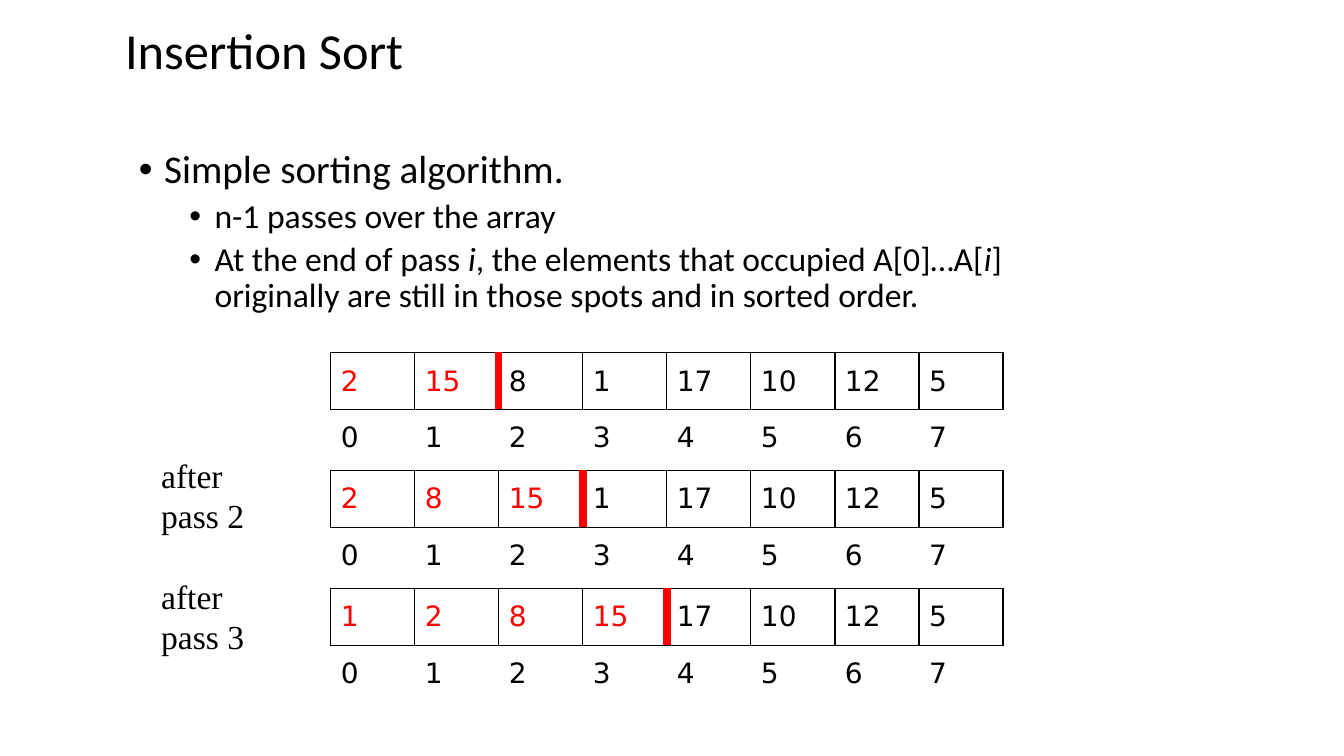
from lxml import etree
from pptx import Presentation
from pptx.dml.color import RGBColor
from pptx.enum.text import MSO_ANCHOR, PP_ALIGN
from pptx.oxml.ns import qn
from pptx.util import Inches, Pt

MIDDLE = MSO_ANCHOR.MIDDLE
TOP = MSO_ANCHOR.TOP
LEFT = PP_ALIGN.LEFT
BLACK, RED = "000000", "FF0000"

PASSES = [
    ([2, 15, 8, 1, 17, 10, 12, 5], 2),
    ([2, 8, 15, 1, 17, 10, 12, 5], 3),
    ([1, 2, 8, 15, 17, 10, 12, 5], 4),
]
POINTS = [
    (0, ["Simple sorting algorithm."]),
    (1, ["n-1 passes over the array"]),
    (1, ["At the end of pass ", "i", ", the elements that occupied A[0]…A[", "i",
         "] originally are still in those spots and in sorted order."]),
]


def color(code):
    return RGBColor.from_string(code)


def style(para, face, size, code=BLACK):
    for run in para.runs:
        run.font.name = face
        run.font.size = Pt(size)
        run.font.color.rgb = color(code)


def place(shape, box):
    shape.left, shape.top, shape.width, shape.height = map(Inches, box)


def add_box(slide, box, wrap):
    frame = slide.shapes.add_textbox(*map(Inches, box)).text_frame
    frame.word_wrap = wrap
    frame.vertical_anchor = TOP
    return frame


def add_title(slide, box, text):
    title = slide.shapes.title
    place(title, box)
    frame = title.text_frame
    frame.text = text
    frame.vertical_anchor = MIDDLE
    para = frame.paragraphs[0]
    para.alignment = LEFT
    para.line_spacing = 0.9
    style(para, "Calibri", 36)


def add_bullet(para, level):
    para.level = level
    props = para._p.get_or_add_pPr()
    props.set("marL", str(Inches(0.25 + 0.5 * level)))
    props.set("indent", str(Inches(-0.25)))
    font = etree.SubElement(props, qn("a:buFont"))
    font.set("typeface", "Arial")
    mark = etree.SubElement(props, qn("a:buChar"))
    mark.set("char", "•")


def add_body(slide, box):
    frame = add_box(slide, box, True)
    for n, (level, parts) in enumerate(POINTS):
        para = frame.add_paragraph() if n else frame.paragraphs[0]
        add_bullet(para, level)
        para.line_spacing = 0.9
        if n:
            para.space_before = Pt(5)
        for part in parts:
            run = para.add_run()
            run.text = part
            run.font.italic = part == "i"
        style(para, "Calibri", 24 if level else 28)


def add_edge(cell, side, code=None, width=1):
    line = etree.SubElement(cell._tc.get_or_add_tcPr(), qn("a:ln" + side))
    line.set("w", str(Pt(width)))
    if code:
        fill = etree.SubElement(line, qn("a:solidFill"))
        etree.SubElement(fill, qn("a:srgbClr")).set("val", code)
    else:
        etree.SubElement(line, qn("a:noFill"))


def fill_cell(cell, value, code, edges):
    for side in "LRTB":
        add_edge(cell, side, *edges.get(side, ()))
    cell.fill.background()
    cell.vertical_anchor = MIDDLE
    cell.text_frame.text = str(value)
    style(cell.text_frame.paragraphs[0], "DejaVu Sans", 20, code)


def add_array(slide, box, values, done):
    count = len(values)
    table = slide.shapes.add_table(2, count, *map(Inches, box)).table
    table.first_row = False
    table.horz_banding = False
    for row in table.rows:
        row.height = Inches(box[3] / 2)
    thin, thick = (BLACK, 1), (RED, 6)
    for n, value in enumerate(values):
        table.columns[n].width = Inches(box[2] / count)
        edges = dict.fromkeys("LRTB", thin)
        if n == done - 1:
            edges["R"] = thick
        elif n == done:
            edges["L"] = thick
        fill_cell(table.cell(0, n), value, RED if n < done else BLACK, edges)
        fill_cell(table.cell(1, n), n, BLACK, {"T": thin})


def add_label(slide, box, number):
    frame = add_box(slide, box, False)
    frame.text = f"after\npass {number}"
    for para in frame.paragraphs:
        style(para, "Times New Roman", 24)


def main():
    deck = Presentation()
    deck.slide_width, deck.slide_height = Inches(13.33), Inches(7.5)
    slide = deck.slides.add_slide(deck.slide_layouts[5])
    add_title(slide, (1.14, 0.04, 11.11, 0.97), "Insertion Sort")
    add_body(slide, (1.28, 1.44, 9, 1.8))
    for n, (values, done) in enumerate(PASSES):
        add_array(slide, (3.28, 3.5 + 1.17 * n, 6.67, 1.13), values, done)
        if n:
            add_label(slide, (1.5, 3.26 + 1.2 * n, 1.03, 0.91), n + 1)
    deck.save("out.pptx")


if __name__ == "__main__":
    main()
